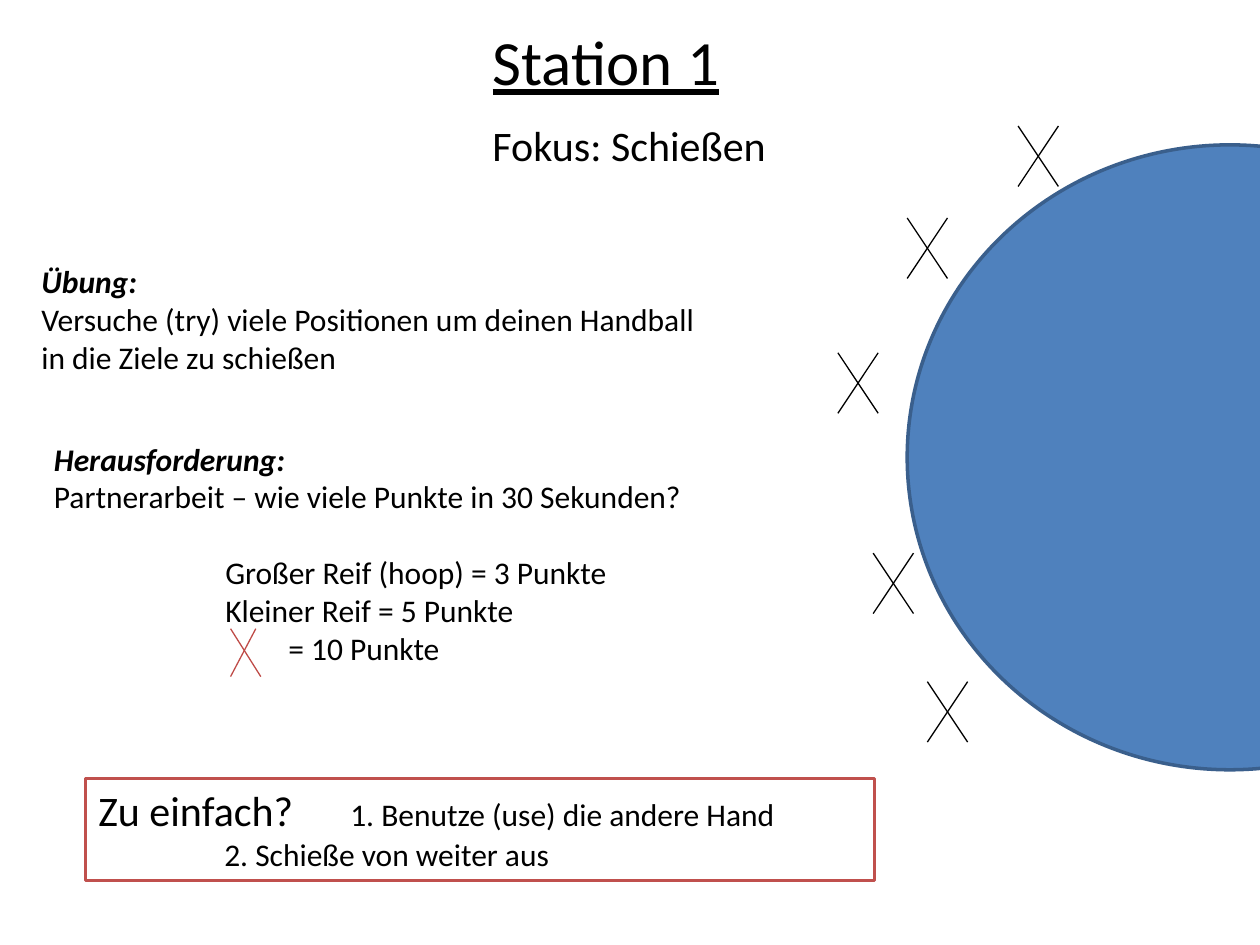
from dataclasses import dataclass

from lxml import etree
from pptx import Presentation
from pptx.dml.color import RGBColor
from pptx.enum import shapes, text
from pptx.oxml.ns import qn
from pptx.util import Inches, Pt


@dataclass(frozen=True)
class Theme:
    font: str = "Calibri"
    ink: str = "000000"
    paper: str = "FFFFFF"
    blue: str = "4F81BD"
    navy: str = "3A5F8C"
    red: str = "C0504D"
    mark: str = "BF4C48"
    head: int = 36
    large: int = 24
    base: int = 18
    edge: float = 2
    thin: float = 0.75


T = Theme()


@dataclass(frozen=True)
class Run:
    text: str
    size: int = T.base
    bold: bool = False
    italic: bool = False
    under: bool = False


@dataclass(frozen=True)
class Box:
    left: float
    top: float
    width: float
    height: float
    paras: tuple[tuple[Run, ...], ...]
    wrap: bool = False


@dataclass(frozen=True)
class Cross:
    left: float
    top: float
    width: float = 0.32
    height: float = 0.48
    color: str = T.ink
    lean: float = 0


def label(words: str) -> tuple[Run, ...]:
    return (Run(words, bold=True, italic=True),)


TITLE = Box(3.81, 0.13, 2.02, 0.71, ((Run("Station 1", T.head, under=True),),))
EASY = Box(0.68, 6.18, 6.26, 0.81, (
    (Run("Zu einfach? ", T.large), Run("\t1. Benutze (use) die andere Hand\t")),
    (Run("\t\t2. Schieße von weiter aus"),),
))
BOXES = (
    Box(3.81, 0.9, 9.21, 0.5, ((Run("Fokus: Schießen", T.large),),), True),
    Box(0.23, 2.03, 5.45, 1.01, (
        label("Übung:"),
        (Run("Versuche (try) viele Positionen um deinen Handball\n"
             "in die Ziele zu schießen"),),
    )),
    Box(1.69, 4.34, 3.27, 1.31, (
        (Run("Großer Reif (hoop) = 3 Punkte"),),
        (Run("Kleiner Reif = 5 Punkte"),),
        (Run("\t= 10 Punkte"),),
    )),
    Box(0.33, 3.44, 5.3, 0.71, (
        label("Herausforderung:"),
        (Run("Partnerarbeit – wie viele Punkte in 30 Sekunden?"),),
    )),
)
CROSSES = (
    Cross(8.08, 1), Cross(7.2, 1.73), Cross(6.65, 2.8),
    Cross(6.93, 4.39), Cross(7.36, 5.41),
    Cross(1.83, 4.99, 0.24, 0.38, T.mark, 0.04),
)


def rgb(code: str) -> RGBColor:
    return RGBColor.from_string(code)


def paint(shape, fill: str, line: str) -> None:
    shape.fill.solid()
    shape.fill.fore_color.rgb = rgb(fill)
    shape.line.color.rgb = rgb(line)
    shape.line.width = Pt(T.edge)


def add_run(para, words: str, run: Run) -> None:
    part = para.add_run()
    part.text = words
    style = {"name": T.font, "size": Pt(run.size), "bold": run.bold,
             "italic": run.italic, "underline": run.under}
    for key, val in style.items():
        setattr(part.font, key, val)
    part.font.color.rgb = rgb(T.ink)


def write(shape, box: Box) -> None:
    """Place the shape and fill it with plain, left-aligned paragraphs."""
    for key in ("left", "top", "width", "height"):
        setattr(shape, key, Inches(getattr(box, key)))
    frame = shape.text_frame
    style = {"word_wrap": box.wrap, "auto_size": text.MSO_AUTO_SIZE.NONE,
             "vertical_anchor": text.MSO_ANCHOR.TOP}
    for key, val in style.items():
        setattr(frame, key, val)
    for num, runs in enumerate(box.paras):
        para = frame.add_paragraph() if num else frame.paragraphs[0]
        para.alignment = text.PP_ALIGN.LEFT
        para.space_before = Pt(0)
        for run in runs:
            for row, words in enumerate(run.text.split("\n")):
                if row:
                    para.add_line_break()
                add_run(para, words, run)


def strip_list(shape) -> None:
    """Remove the bullets and hanging indents of a body placeholder."""
    for para in shape.text_frame.paragraphs:
        props = para._p.get_or_add_pPr()
        props.set("marL", "0")
        props.set("indent", "0")
        etree.SubElement(props, qn("a:buNone"))


def draw_cross(slide, cross: Cross) -> None:
    group = slide.shapes.add_group_shape()
    low = cross.top + cross.height
    right = cross.left + cross.width
    for start, stop, end in ((cross.top, low, right),
                             (low, cross.top, right - cross.lean)):
        ends = map(Inches, (cross.left, start, end, stop))
        line = group.shapes.add_connector(shapes.MSO_CONNECTOR.STRAIGHT, *ends)
        line.line.color.rgb = rgb(cross.color)
        line.line.width = Pt(T.thin)
        etree.SubElement(line._element.spPr, qn("a:effectLst"))


def main() -> None:
    deck = Presentation()
    deck.slide_width, deck.slide_height = Inches(10), Inches(7.5)
    slide = deck.slides.add_slide(deck.slide_layouts[1])
    title, body = slide.placeholders
    write(title, TITLE)
    write(body, EASY)
    strip_list(body)
    paint(body, T.paper, T.red)

    area = map(Inches, (7.2, 1.15, 5.12, 4.96))
    goal = slide.shapes.add_shape(shapes.MSO_SHAPE.OVAL, *area)
    goal.shadow.inherit = False
    paint(goal, T.blue, T.navy)

    for box in BOXES:
        write(slide.shapes.add_textbox(0, 0, 0, 0), box)
    for cross in CROSSES:
        draw_cross(slide, cross)
    deck.save("out.pptx")


if __name__ == "__main__":
    main()
